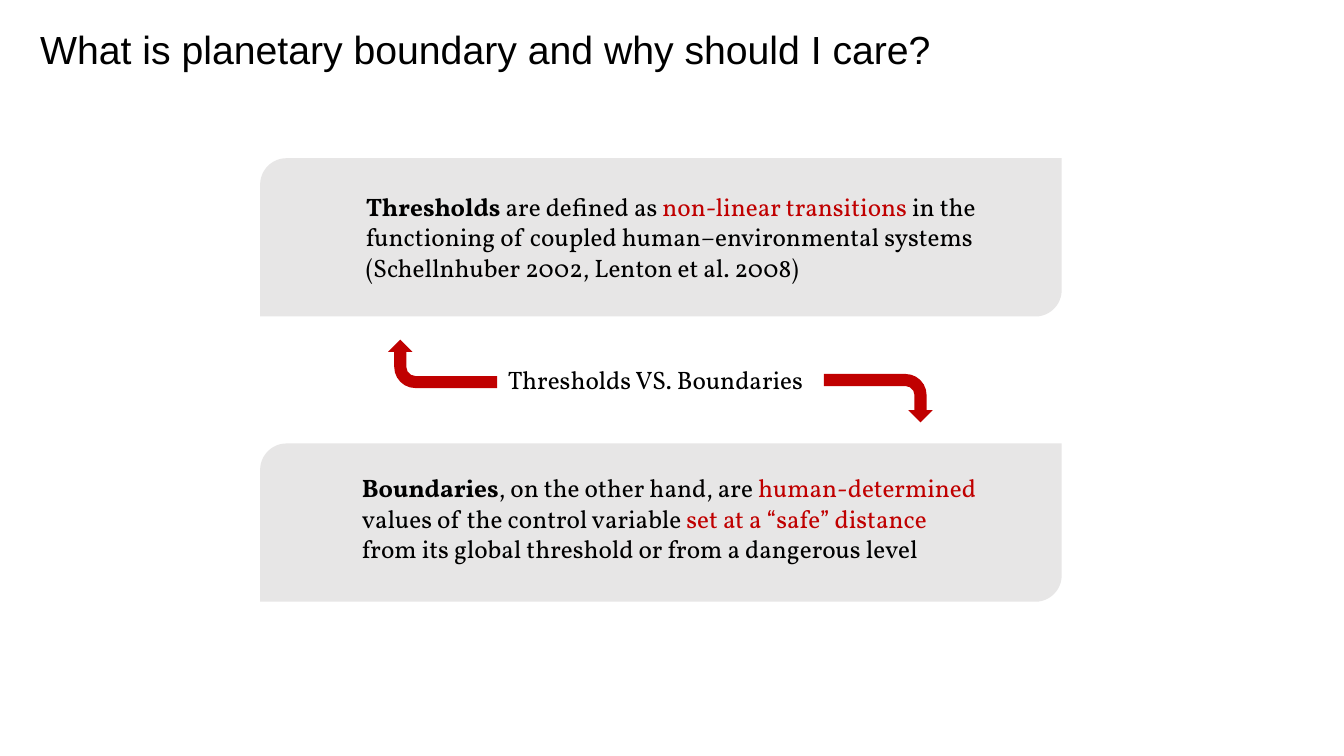
from dataclasses import dataclass

from pptx import Presentation
from pptx.dml.color import RGBColor
from pptx.enum.shapes import MSO_SHAPE
from pptx.enum.text import MSO_AUTO_SIZE
from pptx.util import Inches, Pt

PANEL = MSO_SHAPE.ROUND_2_DIAG_RECTANGLE
BENT_ARROW = MSO_SHAPE.BENT_ARROW
GROW = MSO_AUTO_SIZE.SHAPE_TO_FIT_TEXT


@dataclass(frozen=True)
class Theme:
    ink: str = "000000"
    accent: str = "C00000"
    panel: str = "E7E6E6"
    title_font: str = "Arial"
    body_font: str = "Vollkorn"
    title_size: int = 28
    body_size: int = 18


THEME = Theme()

# Runs are (words, style), where style is "plain", "term" or "accent".
TITLE = [("What is planetary boundary and why should I care?", "plain")]
VERSUS = [("Thresholds VS. Boundaries", "plain")]
THRESHOLDS = [
    ("Thresholds", "term"),
    (" are defined as ", "plain"),
    ("non-linear transitions", "accent"),
    (" in the functioning of coupled human–environmental systems "
     "(Schellnhuber 2002, Lenton et al. 2008)", "plain"),
]
BOUNDARIES = [
    ("Boundaries", "term"),
    (", on the other hand, are ", "plain"),
    ("human-determined", "accent"),
    (" values of the control variable ", "plain"),
    ("set at a “safe” distance ", "accent"),
    ("from its global threshold or from a dangerous level", "plain"),
]

SLIDE_W, SLIDE_H = 13.33, 7.5
PANEL_LEFT, PANEL_W, PANEL_H = 2.58, 7.95, 1.57
PANEL_TOPS = (PANEL_H, 4.4)
DEFINITION_H = 1.01
# Definition: runs, left, top, width
DEFINITIONS = [(THRESHOLDS, 3.53, 1.85, 6.27), (BOUNDARIES, 3.49, 4.64, 6.35)]
ARROW_W, ARROW_H = 0.48, 1.08
# Arrow: left, top, rotation
ARROWS = [(4.15, 3.07, 270), (8.47, 3.41, 90)]


def add_filled(slide, preset, left, top, width, height, color):
    shape = slide.shapes.add_shape(
        preset, Inches(left), Inches(top), Inches(width), Inches(height))
    shape.shadow.inherit = False
    shape.fill.solid()
    shape.fill.fore_color.rgb = RGBColor.from_string(color)
    shape.line.fill.background()
    return shape


def add_text(slide, runs, left, top, width, height,
             font=THEME.body_font, size=THEME.body_size, wrap=True):
    box = slide.shapes.add_textbox(
        Inches(left), Inches(top), Inches(width), Inches(height))
    frame = box.text_frame
    frame.word_wrap = wrap
    frame.auto_size = GROW
    for words, style in runs:
        run = frame.paragraphs[0].add_run()
        run.text = words
        run.font.name = font
        run.font.size = Pt(size)
        run.font.bold = style == "term"
        run.font.color.rgb = RGBColor.from_string(
            THEME.accent if style == "accent" else THEME.ink)


def main():
    deck = Presentation()
    deck.slide_width, deck.slide_height = Inches(SLIDE_W), Inches(SLIDE_H)
    slide = deck.slides.add_slide(deck.slide_layouts[6])

    for top in PANEL_TOPS:
        add_filled(slide, PANEL, PANEL_LEFT, top, PANEL_W, PANEL_H, THEME.panel)

    add_text(slide, TITLE, 0.3, 0.2, 10.31, 0.57,
             font=THEME.title_font, size=THEME.title_size)
    add_text(slide, VERSUS, 4.94, 3.57, 3.23, 0.4, wrap=False)
    for runs, left, top, width in DEFINITIONS:
        add_text(slide, runs, left, top, width, DEFINITION_H)

    for left, top, rotation in ARROWS:
        arrow = add_filled(
            slide, BENT_ARROW, left, top, ARROW_W, ARROW_H, THEME.accent)
        arrow.rotation = rotation

    deck.save("out.pptx")


if __name__ == "__main__":
    main()
